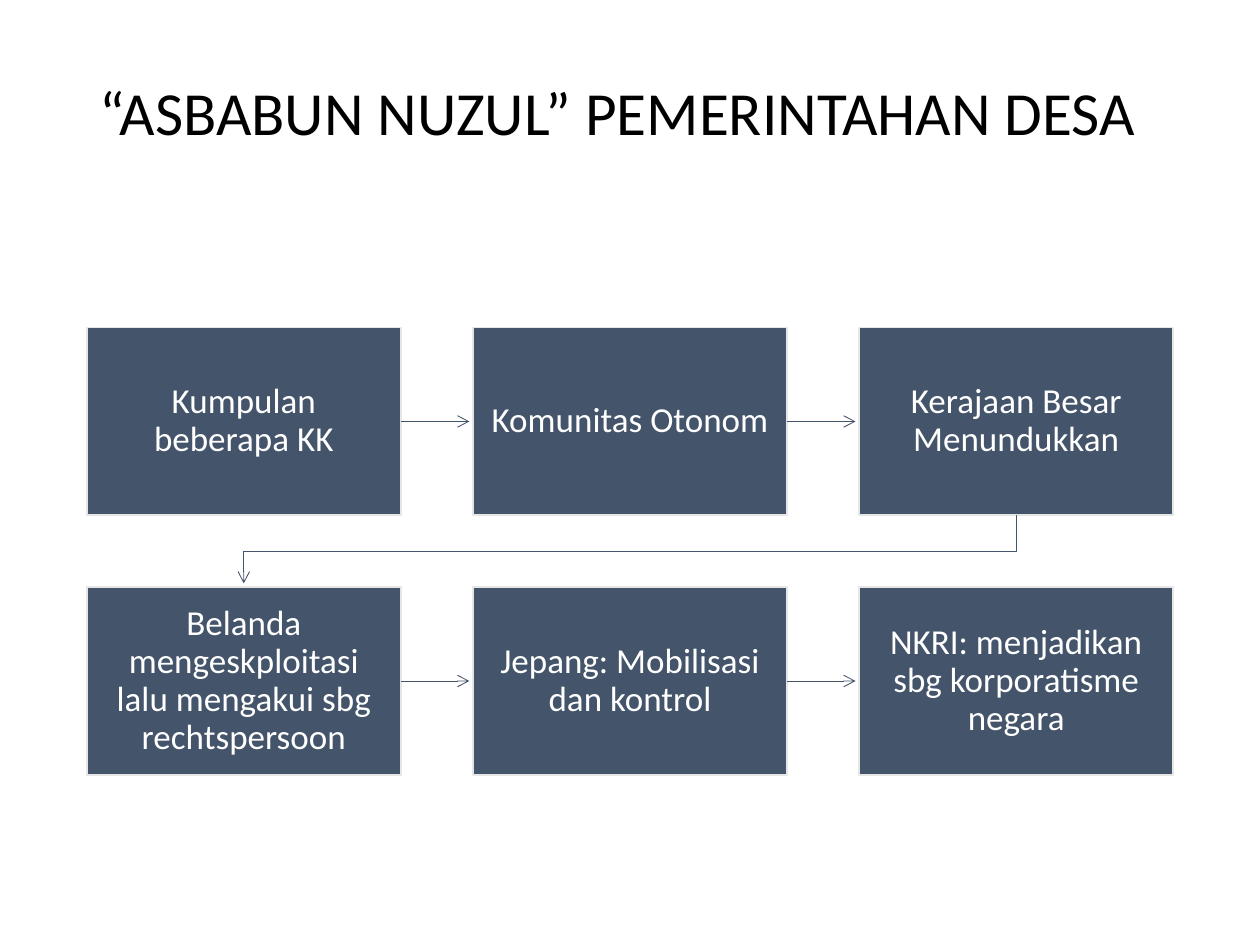
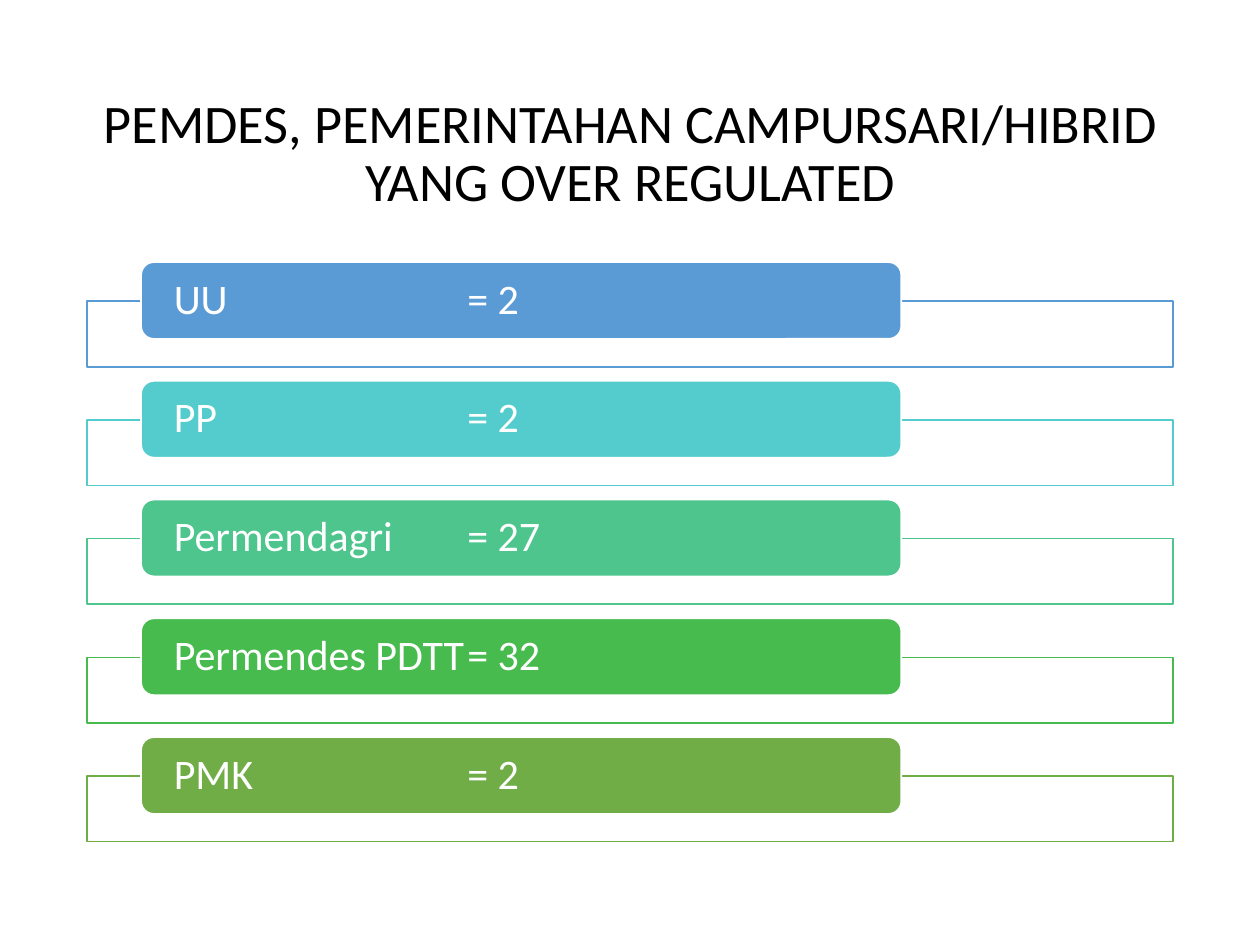
from lxml import etree
from pptx import Presentation
from pptx.dml.color import RGBColor
from pptx.enum import shapes, text
from pptx.oxml import ns
from pptx.util import Inches, Pt

FONT = "Calibri"
BLACK, WHITE, NAVY, PALE = "000000", "FFFFFF", "44546A", "E7E6E6"
BODY = (0.69, 2.08, 8.62, 4.6)
TITLE_BOX = (0.69, 0.61, 8.62, 1.24)
STEPS = [
    ["Kumpulan beberapa KK", "Komunitas Otonom", "Kerajaan Besar Menundukkan"],
    ["Belanda mengeskploitasi lalu mengakui sbg rechtspersoon",
     "Jepang: Mobilisasi dan kontrol",
     "NKRI: menjadikan sbg korporatisme negara"],
]
REGULATIONS = [
    ("UU", 2, "5B9BD5"),
    ("PP", 2, "54CCCD"),
    ("Permendagri", 27, "4DC58D"),
    ("Permendes PDTT", 32, "48BB4F"),
    ("PMK", 2, "70AD47"),
]


def rgb(value):
    return RGBColor.from_string(value)


def inches(*values):
    return [Inches(value) for value in values]


def set_line(shape, color, width):
    shape.line.color.rgb = rgb(color)
    shape.line.width = Pt(width)


def add_box(page, kind, box, fill, line):
    shape = page.shapes.add_shape(kind, *inches(*box))
    shape.shadow.inherit = False
    shape.fill.solid()
    shape.fill.fore_color.rgb = rgb(fill)
    set_line(shape, line, 1)
    return shape


def write(shape, words, size, color, align, anchor=text.MSO_ANCHOR.MIDDLE,
          insets=(0.1, 0.05)):
    frame = shape.text_frame
    frame.word_wrap = True
    frame.vertical_anchor = anchor
    frame.margin_left = frame.margin_right = Inches(insets[0])
    frame.margin_top = frame.margin_bottom = Inches(insets[1])
    para = frame.paragraphs[0]
    para.alignment = align
    para.line_spacing = 0.9
    span = para.add_run()
    span.text = words
    span.font.name = FONT
    span.font.size = Pt(size)
    span.font.color.rgb = rgb(color)
    return para


def add_title(page, words, size, align, anchor):
    title = page.shapes.add_textbox(*inches(*TITLE_BOX))
    write(title, words, size, BLACK, align, anchor)


def add_arrowhead(shape):
    outline = shape.element.spPr.find(ns.qn("a:ln"))
    etree.SubElement(outline, ns.qn("a:tailEnd"), type="arrow")


def add_step_arrow(page, step, length):
    x, y = step.left + step.width, step.top + step.height // 2
    arrow = page.shapes.add_connector(
        shapes.MSO_CONNECTOR.STRAIGHT, x, y, x + Inches(length), y)
    arrow.begin_connect(step, 3)
    set_line(arrow, NAVY, 0.5)
    add_arrowhead(arrow)
    etree.SubElement(arrow.element.spPr, ns.qn("a:effectLst"))


def add_return_arrow(page, start, bend_y, end):
    builder = page.shapes.build_freeform(*inches(*start))
    corners = [(start[0], bend_y), (end[0], bend_y), end]
    builder.add_line_segments([inches(*corner) for corner in corners], close=False)
    arrow = builder.convert_to_shape()
    arrow.shadow.inherit = False
    arrow.fill.background()
    set_line(arrow, NAVY, 0.5)
    add_arrowhead(arrow)


def add_step_flow(page, box):
    left, top, width, _ = box
    step_w, step_h, first_y, row_pitch, tip_gap = 2.49, 1.49, top + 0.52, 2.06, 0.03
    column_pitch = (width - step_w) / 2
    for row, names in enumerate(STEPS):
        for column, name in enumerate(names):
            place = (left + column * column_pitch, first_y + row * row_pitch,
                     step_w, step_h)
            step = add_box(page, shapes.MSO_SHAPE.RECTANGLE, place, NAVY, PALE)
            write(step, name, 20, WHITE, text.PP_ALIGN.CENTER, insets=(0.12, 0.13))
            if column < len(names) - 1:
                add_step_arrow(page, step, column_pitch - step_w - tip_gap)
    bottom = first_y + step_h
    add_return_arrow(page, (left + width - step_w / 2, bottom), bottom + 0.29,
                     (left + step_w / 2, first_y + row_pitch - tip_gap))


def add_count_tab(para, position):
    tabs = etree.SubElement(para._p.get_or_add_pPr(), ns.qn("a:tabLst"))
    etree.SubElement(tabs, ns.qn("a:tab"), pos=str(Inches(position)), algn="l")


def add_regulation_list(page, box):
    left, top, width, height = box
    label_h, frame_offset, frame_h = 0.61, 0.31, 0.52
    pitch = (height - frame_offset - frame_h) / (len(REGULATIONS) - 1)
    for row, (name, count, color) in enumerate(REGULATIONS):
        y = top + row * pitch
        add_box(page, shapes.MSO_SHAPE.RECTANGLE,
                (left, y + frame_offset, width, frame_h), WHITE, color)
        label = add_box(page, shapes.MSO_SHAPE.ROUNDED_RECTANGLE,
                        (left + 0.43, y, width * 0.7, label_h), color, WHITE)
        para = write(label, f"{name}\t= {count}", 24, WHITE,
                     text.PP_ALIGN.LEFT, insets=(0.23, 0))
        add_count_tab(para, 2.33)


def main():
    deck = Presentation()
    deck.slide_width, deck.slide_height = inches(10, 7.5)
    blank = deck.slide_layouts[6]

    page = deck.slides.add_slide(blank)
    add_title(page, "“ASBABUN NUZUL” PEMERINTAHAN DESA", 35,
              text.PP_ALIGN.LEFT, text.MSO_ANCHOR.TOP)
    add_step_flow(page, BODY)

    page = deck.slides.add_slide(blank)
    add_title(page, "PEMDES, PEMERINTAHAN CAMPURSARI/HIBRID YANG OVER REGULATED", 31,
              text.PP_ALIGN.CENTER, text.MSO_ANCHOR.MIDDLE)
    add_regulation_list(page, BODY)

    deck.save("out.pptx")


if __name__ == "__main__":
    main()
